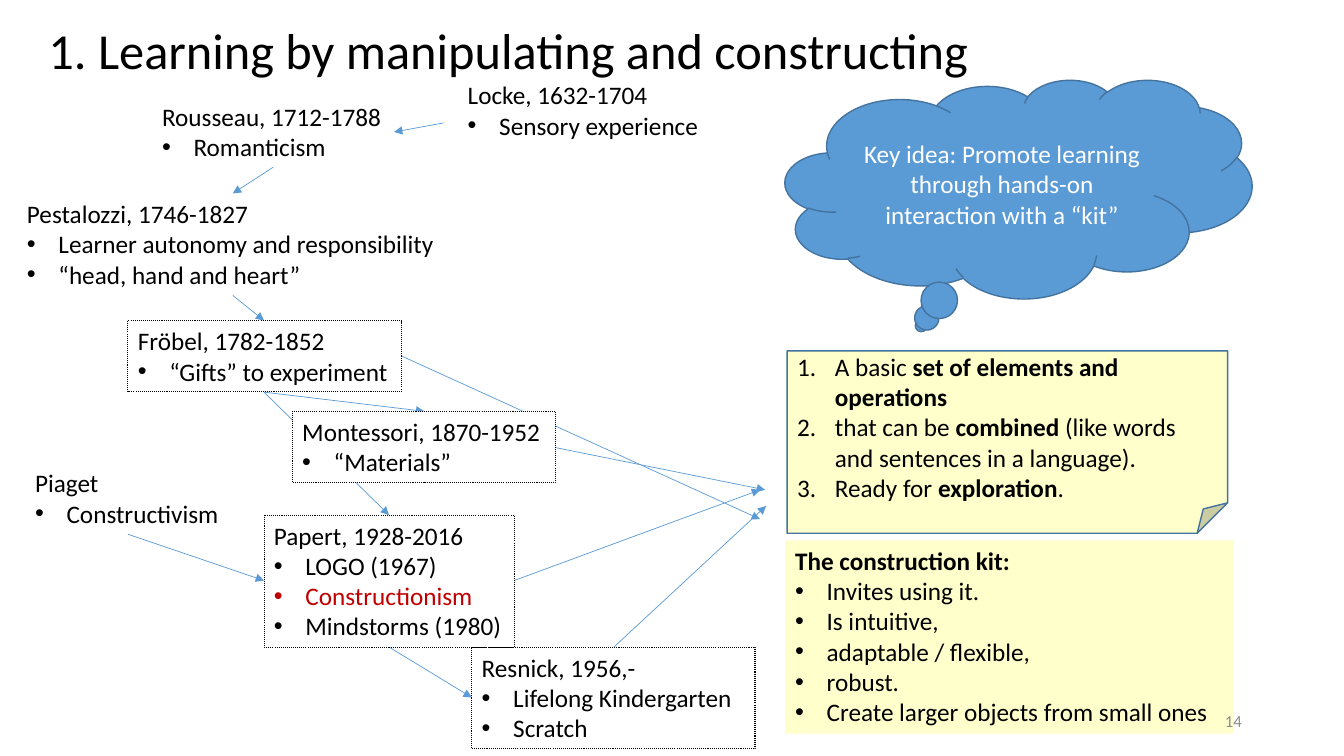
import pptx
import pptx.util
import pptx.dml.color
import pptx.enum.dml
import pptx.enum.shapes
import pptx.enum.text
import pptx.oxml.ns
import lxml.etree

Pt = pptx.util.Pt
RGBColor = pptx.dml.color.RGBColor
Shape = pptx.enum.shapes.MSO_SHAPE
Align = pptx.enum.text.PP_ALIGN
Anchor = pptx.enum.text.MSO_ANCHOR
Fit = pptx.enum.text.MSO_AUTO_SIZE
qn = pptx.oxml.ns.qn

BLACK = RGBColor(0x00, 0x00, 0x00)
WHITE = RGBColor(0xFF, 0xFF, 0xFF)
RED = RGBColor(0xC0, 0x00, 0x00)
GRAY = RGBColor(0x8C, 0x8C, 0x8C)
BLUE = RGBColor(0x5B, 0x9B, 0xD5)
DARK_BLUE = RGBColor(0x43, 0x73, 0x9E)
YELLOW = RGBColor(0xFF, 0xFF, 0xCC)

INDENTS = {"bullet": 22.5, "number": 27}


def write(paragraph, text, size=18, color=BLACK, align=Align.LEFT, marker=None):
    paragraph.alignment = align
    if marker:
        properties = paragraph._p.get_or_add_pPr()
        properties.set("marL", str(Pt(INDENTS[marker])))
        properties.set("indent", str(-Pt(INDENTS[marker])))
        if marker == "number":
            lxml.etree.SubElement(properties, qn("a:buAutoNum"), type="arabicPeriod")
        else:
            lxml.etree.SubElement(properties, qn("a:buFont"), typeface="Arial")
            lxml.etree.SubElement(properties, qn("a:buChar"), char="•")
    for position, part in enumerate(text.split("**")):
        if part:
            run = paragraph.add_run()
            run.text = part
            run.font.name = "Calibri"
            run.font.size = Pt(size)
            run.font.color.rgb = color
            run.font.bold = position % 2 == 1


class Board:
    def __init__(self, slide):
        self.slide = slide

    def title(self, text, left, top, width, height):
        heading = self.slide.shapes.title
        heading.left, heading.top = Pt(left), Pt(top)
        heading.width, heading.height = Pt(width), Pt(height)
        heading.text_frame.auto_size = Fit.NONE
        heading.text_frame.vertical_anchor = Anchor.MIDDLE
        paragraph = heading.text_frame.paragraphs[0]
        paragraph.line_spacing = 0.9
        write(paragraph, text, size=36)

    def card(self, area, heading, items, framed=False, fill=None, wrap=False):
        card = self.slide.shapes.add_textbox(*map(Pt, area))
        if fill is not None:
            card.fill.solid()
            card.fill.fore_color.rgb = fill
        if framed:
            card.line.color.rgb = BLACK
            card.line.width = Pt(0.75)
            card.line.dash_style = pptx.enum.dml.MSO_LINE.ROUND_DOT
        frame = card.text_frame
        frame.word_wrap = wrap
        frame.auto_size = Fit.SHAPE_TO_FIT_TEXT
        write(frame.paragraphs[0], heading)
        for item in items:
            color = RED if item == "Constructionism" else BLACK
            write(frame.add_paragraph(), item, color=color, marker="bullet")

    def callout(self, kind, area, paragraphs, fill, **style):
        callout = self.slide.shapes.add_shape(kind, *map(Pt, area))
        callout.shadow.inherit = False
        callout.fill.solid()
        callout.fill.fore_color.rgb = fill
        callout.line.color.rgb = DARK_BLUE
        callout.line.width = Pt(1)
        frame = callout.text_frame
        frame.word_wrap = True
        frame.vertical_anchor = Anchor.MIDDLE
        for position, text in enumerate(paragraphs):
            paragraph = frame.add_paragraph() if position else frame.paragraphs[0]
            write(paragraph, text, **style)

    def arrow(self, *ends):
        arrow = self.slide.shapes.add_connector(
            pptx.enum.shapes.MSO_CONNECTOR.STRAIGHT, *map(Pt, ends))
        arrow.line.color.rgb = BLUE
        arrow.line.width = Pt(0.5)
        lxml.etree.SubElement(arrow.line._get_or_add_ln(), qn("a:tailEnd"), type="triangle")
        lxml.etree.SubElement(arrow._element.spPr, qn("a:effectLst"))

    def page_number(self, text, area):
        box = self.slide.shapes.add_textbox(*map(Pt, area))
        box.text_frame.word_wrap = True
        box.text_frame.vertical_anchor = Anchor.MIDDLE
        write(box.text_frame.paragraphs[0], text, size=12, color=GRAY, align=Align.RIGHT)


INFLUENCES = [
    (316.8, 87.8, 281.5, 94.3),
    (195.1, 119.5, 166.3, 138.2),
    (166.3, 211, 188.6, 229),
    (188.6, 280.1, 303.1, 293.8),
    (188.6, 280.1, 277.9, 367.9),
    (91.4, 381.6, 188.6, 414.7),
    (277.9, 462.2, 337, 498.2),
    (286.6, 254.2, 542.9, 370.8),
    (396.7, 319.7, 546.5, 349.9),
    (367.2, 414.7, 542.9, 349.9),
    (438.5, 462.2, 547.2, 361.4),
]

THINKERS = [
    ((327, 53.3, 180.7, 51), "Locke, 1632-1704", ["Sensory experience"], {}),
    ((108.7, 69, 172.8, 51), "Rousseau, 1712-1788", ["Romanticism"], {}),
    ((12.2, 138.2, 308.2, 72.7), "Pestalozzi, 1746-1827",
     ["Learner autonomy and responsibility", "“head, hand and heart”"], {}),
    ((18, 330.5, 146.9, 51), "Piaget", ["Constructivism"], {}),
    ((91.4, 229, 195.1, 51), "Fröbel, 1782-1852", ["“Gifts” to experiment"],
     {"framed": True}),
    ((208.8, 293.8, 187.9, 51), "Montessori, 1870-1952", ["“Materials”"],
     {"framed": True, "fill": WHITE}),
    ((188.6, 367.9, 178.6, 94.3), "Papert, 1928-2016",
     ["LOGO (1967)", "Constructionism", "Mindstorms (1980)"], {"framed": True}),
    ((337, 462.2, 202.3, 72.7), "Resnick, 1956,-",
     ["Lifelong Kindergarten", "Scratch"], {"framed": True, "wrap": True}),
]


def main():
    deck = pptx.Presentation()
    deck.slide_width, deck.slide_height = Pt(960), Pt(540)
    board = Board(deck.slides.add_slide(deck.slide_layouts[5]))
    board.title("1. Learning by manipulating and constructing", 27.4, 7.9, 684, 59.8)
    for ends in INFLUENCES:
        board.arrow(*ends)
    for area, name, ideas, style in THINKERS:
        board.card(area, name, ideas, **style)
    board.callout(
        Shape.CLOUD_CALLOUT, (560.9, 56.9, 333.4, 156.2),
        ["Key idea: Promote learning through hands-on interaction with a “kit”"],
        BLUE, color=WHITE, align=Align.CENTER)
    board.callout(
        Shape.FOLDED_CORNER, (562.3, 250.6, 314.6, 130.3),
        ["A basic **set of elements and operations**",
         "that can be **combined** (like words and sentences in a language).",
         "Ready for **exploration**."],
        YELLOW, marker="number")
    board.card(
        (560.9, 385.9, 320.4, 138.2), "**The construction kit:**",
        ["Invites using it.", "Is intuitive,", "adaptable / flexible,", "robust.",
         "Create larger objects from small ones"],
        fill=YELLOW, wrap=True)
    board.page_number("14", (678.2, 500.4, 216, 28.8))
    deck.save("out.pptx")


if __name__ == "__main__":
    main()
